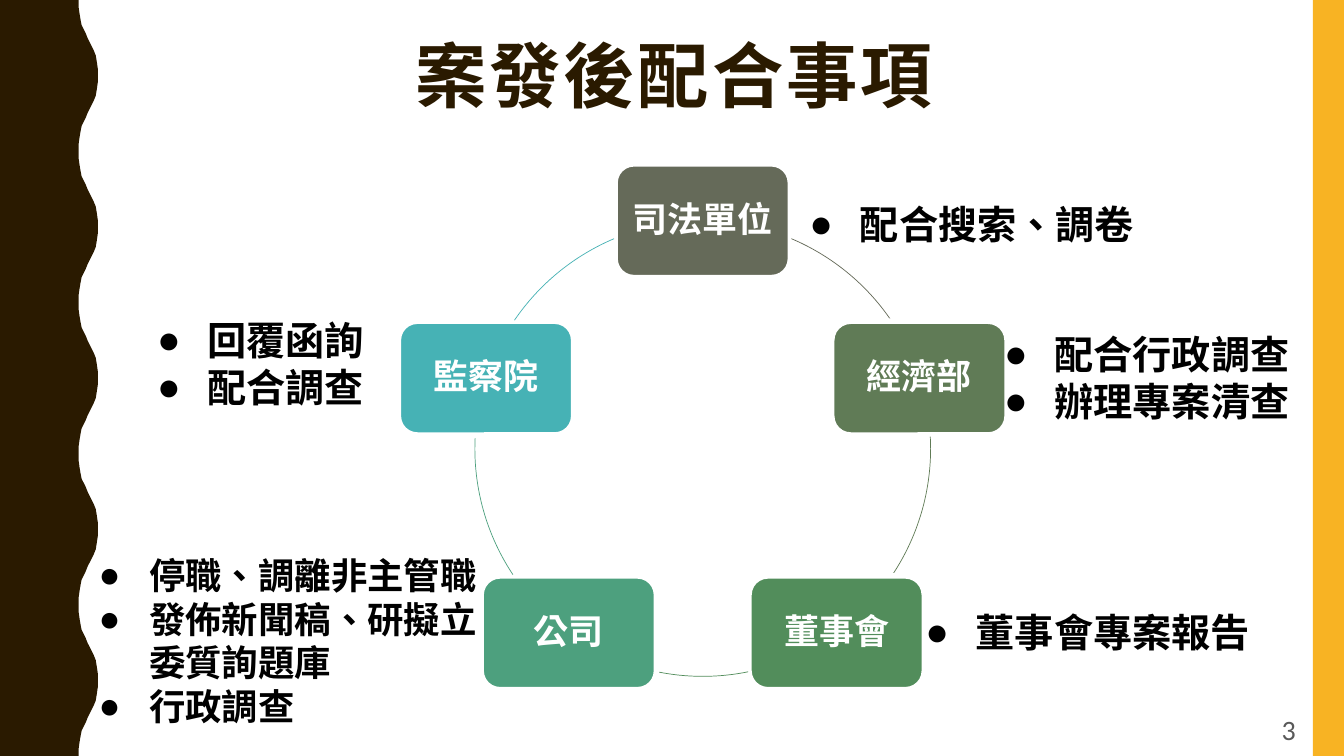
from dataclasses import dataclass
from math import cos, radians, sin

from lxml.etree import SubElement
from pptx import Presentation
from pptx.dml.color import RGBColor
from pptx.enum.shapes import MSO_SHAPE
from pptx.enum.text import MSO_ANCHOR, PP_ALIGN
from pptx.oxml.ns import qn
from pptx.util import Pt

PX = 9144
WIDTH, HEIGHT = 1333, 750
CENTER_X, CENTER_Y, RADIUS = 697, 445, 226
NODE_W, NODE_H = 174, 113


@dataclass(frozen=True)
class Theme:
    heading_font: str = "Arial"
    body_font: str = "Calibri"
    dark: str = "2A1A00"
    gold: str = "F8B323"
    white: str = "FFFFFF"
    black: str = "000000"
    gray: str = "595959"
    title_size: int = 51
    node_size: int = 25
    note_size: int = 28
    small_note_size: int = 26
    number_size: int = 20


THEME = Theme()

NODES = [
    ("司法單位", "656A59", (22.9, 55.7)),
    ("經濟部", "607B56", (87, 123.6)),
    ("董事會", "528D5B", (168.5, 191.5)),
    ("公司", "4DA07E", (236.4, 273)),
    ("監察院", "46B2B5", (304.3, 337.1)),
]

NOTES = [
    ((793, 194, 342, 57), THEME.note_size, ["配合搜索、調卷"]),
    ((986, 323, 312, 104), THEME.note_size, ["配合行政調查", "辦理專案清查"]),
    ((908, 599, 342, 57), THEME.note_size, ["董事會專案報告"]),
    ((146, 309, 301, 104), THEME.note_size, ["回覆函詢", "配合調查"]),
    ((88, 544, 403, 200), THEME.small_note_size,
     ["停職、調離非主管職", "發佈新聞稿、研擬立委質詢題庫", "行政調查"]),
]

WAVE_PERIOD = 150
HALF_WAVE = [(78, 0), (78, 7), (79, 14), (80, 20), (81, 25), (83, 29), (85, 33), (87, 38),
             (89, 42), (91, 46), (93, 50), (95, 55), (96, 61), (97, 68), (97, 75)]


def emu(*lengths):
    return [round(n * PX) for n in lengths]


def rgb(color):
    return RGBColor.from_string(color)


def style_runs(p, font, size, color, bold=True):
    for r in p.runs:
        r.font.name = font
        r.font.size = Pt(size)
        r.font.bold = bold
        r.font.color.rgb = rgb(color)
        rPr = r._r.get_or_add_rPr()
        rPr.set("lang", "zh-TW")
        SubElement(rPr, qn("a:ea"), typeface=font)


def paint(sp, fill=None, line=None, width=1):
    sp.shadow.inherit = False
    if fill:
        sp.fill.solid()
        sp.fill.fore_color.rgb = rgb(fill)
    else:
        sp.fill.background()
    if line:
        sp.line.color.rgb = rgb(line)
        sp.line.width = Pt(width)
    else:
        sp.line.fill.background()


def add_wave(s):
    mirrored = [(x, WAVE_PERIOD - y) for x, y in HALF_WAVE[-2:0:-1]]
    edge = [(x, y + top) for top in range(0, HEIGHT, WAVE_PERIOD)
            for x, y in HALF_WAVE + mirrored]
    builder = s.shapes.build_freeform(0, 0, scale=PX)
    builder.add_line_segments([*edge, (78, HEIGHT), (0, HEIGHT)], close=True)
    paint(builder.convert_to_shape(), THEME.dark)


def add_bar(s):
    sp = s.shapes.add_shape(MSO_SHAPE.RECTANGLE, *emu(1302, 0, 31, HEIGHT))
    paint(sp, THEME.gold)


def add_title(s, text):
    sp = s.shapes.title
    sp.left, sp.top, sp.width, sp.height = emu(112, 25, 1113, 97)
    tf = sp.text_frame
    tf.text = text
    tf.vertical_anchor = MSO_ANCHOR.BOTTOM
    p = tf.paragraphs[0]
    p.alignment = PP_ALIGN.CENTER
    p.line_spacing = 0.9
    style_runs(p, THEME.heading_font, THEME.title_size, THEME.dark)
    p.runs[0]._r.get_or_add_rPr().set("spc", "200")


def on_ring(degrees):
    angle = radians(degrees)
    return CENTER_X + RADIUS * sin(angle), CENTER_Y - RADIUS * cos(angle)


def add_arc(s, ends, color):
    box = emu(CENTER_X - RADIUS, CENTER_Y - RADIUS, 2 * RADIUS, 2 * RADIUS)
    sp = s.shapes.add_shape(MSO_SHAPE.ARC, *box)
    for i, degrees in enumerate(ends):
        sp.adjustments[i] = (degrees - 90) % 360 * 0.6
    paint(sp, line=color, width=0.5)


def add_node(s, degrees, text, color):
    x, y = on_ring(degrees)
    box = emu(x - NODE_W / 2, y - NODE_H / 2, NODE_W, NODE_H)
    sp = s.shapes.add_shape(MSO_SHAPE.ROUNDED_RECTANGLE, *box)
    paint(sp, color, THEME.white, 4)
    tf = sp.text_frame
    tf.text = text
    tf.word_wrap = True
    tf.vertical_anchor = MSO_ANCHOR.MIDDLE
    tf.margin_left = tf.margin_right = tf.margin_top = tf.margin_bottom = 10 * PX
    p = tf.paragraphs[0]
    p.alignment = PP_ALIGN.CENTER
    p.line_spacing = 0.9
    style_runs(p, THEME.body_font, THEME.node_size, THEME.white)


def add_bullet(p):
    pPr = p._p.get_or_add_pPr()
    pPr.set("marL", str(50 * PX))
    pPr.set("indent", str(-50 * PX))
    SubElement(pPr, qn("a:buFont"), typeface=THEME.heading_font)
    SubElement(pPr, qn("a:buChar"), char="●")


def add_note(s, box, size, lines):
    tf = s.shapes.add_textbox(*emu(*box)).text_frame
    tf.word_wrap = True
    tf.text = "\n".join(lines)
    for p in tf.paragraphs:
        add_bullet(p)
        style_runs(p, THEME.body_font, size, THEME.black)


def add_page_number(s, text):
    tf = s.shapes.add_textbox(*emu(987, 704, 308, 38)).text_frame
    tf.word_wrap = True
    tf.vertical_anchor = MSO_ANCHOR.MIDDLE
    tf.text = text
    p = tf.paragraphs[0]
    p.alignment = PP_ALIGN.RIGHT
    style_runs(p, THEME.body_font, THEME.number_size, THEME.gray, bold=False)


def main():
    prs = Presentation()
    prs.slide_width, prs.slide_height = emu(WIDTH, HEIGHT)
    s = prs.slides.add_slide(prs.slide_layouts[5])
    add_wave(s)
    add_bar(s)
    add_title(s, "案發後配合事項")
    for i, (text, color, ends) in enumerate(NODES):
        add_node(s, i * 360 / len(NODES), text, color)
        add_arc(s, ends, color)
    for note in NOTES:
        add_note(s, *note)
    add_page_number(s, "3")
    prs.save("out.pptx")


if __name__ == "__main__":
    main()
